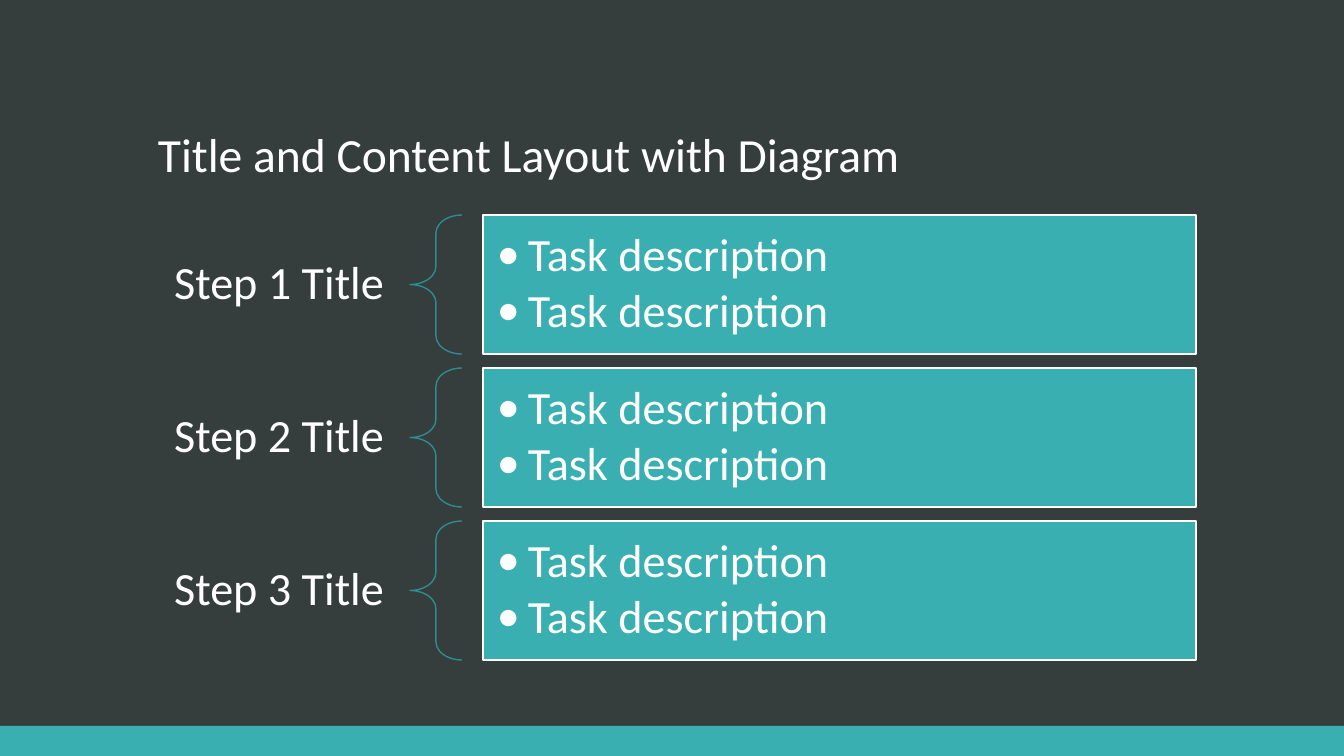
from lxml.etree import SubElement
from pptx import Presentation
from pptx.dml.color import RGBColor
from pptx.enum.shapes import MSO_SHAPE as Shape
from pptx.enum.text import MSO_ANCHOR as Anchor, PP_ALIGN as Align
from pptx.oxml.ns import qn
from pptx.util import Pt

TITLE = "Title and Content Layout with Diagram"
STEPS = [
    ("Step 1 Title", ["Task description", "Task description"]),
    ("Step 2 Title", ["Task description", "Task description"]),
    ("Step 3 Title", ["Task description", "Task description"]),
]
COLORS = {"background": "363D3D", "teal": "3AAFB2", "brace": "2E8C8F", "white": "FFFFFF"}
FONT = "Calibri"
TITLE_PT, STEP_PT = 34, 33

# Lengths in px
EMU_PER_PX = 914400 / 100.8
SLIDE_W, SLIDE_H = 1344, 756
FOOTER_H = 30
TITLE_BOX = (148, 51, 1048, 137)
FIRST_TOP, ROW_H, ROW_PITCH = 215, 139, 153
LABEL_X, LABEL_W, LABEL_H = 148, 262, 72
BRACE_X, BRACE_W = 410, 52
TASKS_X, TASKS_W = 483, 713
BULLET_INDENT = 31


def px(length):
    return round(length * EMU_PER_PX)


def rgb(name):
    return RGBColor.from_string(COLORS[name])


def add_block(slide, kind, box, fill=None, line=None):
    block = slide.shapes.add_shape(kind, *map(px, box))
    block.shadow.inherit = False
    if fill:
        block.fill.solid()
        block.fill.fore_color.rgb = rgb(fill)
    else:
        block.fill.background()
    if line:
        block.line.color.rgb = rgb(line)
        block.line.width = Pt(1)
    else:
        block.line.fill.background()
    return block


def write(frame, lines, size, anchor, insets, align=Align.LEFT, space_after=0):
    """Fill a text frame with one white paragraph per line; insets are (sides, top and bottom)."""
    frame.word_wrap = True
    frame.vertical_anchor = anchor
    frame.margin_left = frame.margin_right = px(insets[0])
    frame.margin_top = frame.margin_bottom = px(insets[1])
    frame.text = "\n".join(lines)
    for paragraph in frame.paragraphs:
        paragraph.alignment = align
        paragraph.line_spacing = 0.9
        paragraph.space_after = Pt(space_after)
        for run in paragraph.runs:
            run.font.name = FONT
            run.font.size = Pt(size)
            run.font.color.rgb = rgb("white")


def add_bullets(frame):
    for paragraph in frame.paragraphs:
        properties = paragraph._p.get_or_add_pPr()
        properties.set("marL", str(px(BULLET_INDENT)))
        properties.set("indent", str(-px(BULLET_INDENT)))
        SubElement(properties, qn("a:buFont"), typeface=FONT)
        SubElement(properties, qn("a:buChar"), char="•")


def add_step(slide, top, label, tasks):
    label_top = top + (ROW_H - LABEL_H) / 2
    label_box = slide.shapes.add_textbox(*map(px, (LABEL_X, label_top, LABEL_W, LABEL_H)))
    write(label_box.text_frame, [label], STEP_PT, Anchor.MIDDLE, (26, 9), Align.RIGHT)

    brace = add_block(slide, Shape.LEFT_BRACE, (BRACE_X, top, BRACE_W, ROW_H), line="brace")
    brace.adjustments[0] = 0.35
    brace.adjustments[1] = 0.5

    panel = add_block(slide, Shape.RECTANGLE, (TASKS_X, top, TASKS_W, ROW_H), "teal", "white")
    write(panel.text_frame, tasks, STEP_PT, Anchor.MIDDLE, (14, 14), space_after=5)
    add_bullets(panel.text_frame)


def main():
    deck = Presentation()
    deck.slide_width, deck.slide_height = px(SLIDE_W), px(SLIDE_H)
    slide = deck.slides.add_slide(deck.slide_layouts[6])
    slide.background.fill.solid()
    slide.background.fill.fore_color.rgb = rgb("background")

    add_block(slide, Shape.RECTANGLE, (0, SLIDE_H - FOOTER_H, SLIDE_W, FOOTER_H), "teal")
    title = slide.shapes.add_textbox(*map(px, TITLE_BOX))
    write(title.text_frame, [TITLE], TITLE_PT, Anchor.BOTTOM, (10, 5))

    for row, (label, tasks) in enumerate(STEPS):
        add_step(slide, FIRST_TOP + row * ROW_PITCH, label, tasks)

    deck.save("out.pptx")


if __name__ == "__main__":
    main()
